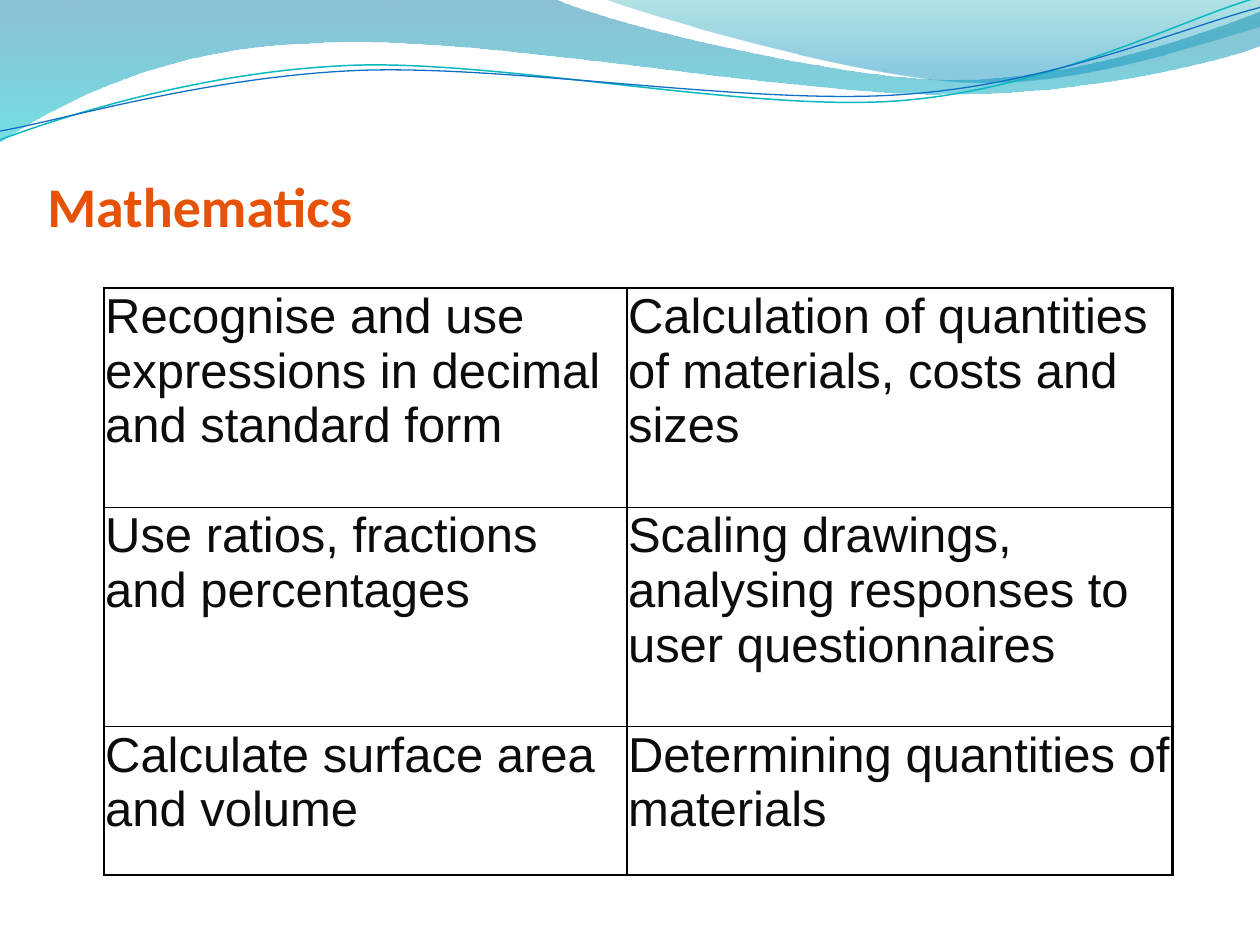
import math

import pptx
import pptx.util
import pptx.dml.color
import pptx.enum.text
import pptx.oxml
from pptx.oxml.ns import qn

Pt = pptx.util.Pt
NS = 'xmlns:a="http://schemas.openxmlformats.org/drawingml/2006/main"'

TITLE = "Mathematics"
ROWS = [
    ("Recognise and use expressions in decimal and standard form",
     "Calculation of quantities of materials, costs and sizes"),
    ("Use ratios, fractions and percentages",
     "Scaling drawings, analysing responses to user questionnaires"),
    ("Calculate surface area and volume",
     "Determining quantities of materials"),
]
COL_WIDTHS = [298.8, 311.8]
ROW_HEIGHTS = [125.3, 125.3, 85]
TABLE_LEFT, TABLE_TOP = 59.4, 164.6
OUTER, INNER = 1.5, 1

# A wave is a list of parts: one point is a straight step, three are a curve.
BANDS = [
    {"wave": [[(0, 0)], [(316.8, -0.7)],
              [(342.7, 12.2), (478.1, 45.4), (545.8, 45.4)],
              [(614.2, 45.4), (689.8, 18.7), (720, 6.5)],
              [(720.7, 25.9)],
              [(707.8, 31.7), (626.4, 54.7), (537.1, 54)],
              [(447.8, 54), (275, 20.2), (185, 24.5)],
              [(92.9, 25.9), (33.1, 59.8), (-0.7, 81.4)]],
     "stops": [(0, "0074A1", 45), (1, "00C6CF", 55)]},
    {"wave": [[(344.9, -0.7)],
              [(366.5, 7.9), (491, 44.6), (553.7, 46.8)],
              [(616.3, 49.7), (691.9, 23), (720, 15.1)],
              [(720, 0)]],
     "stops": [(0, "00A1A9", 30), (0.8, "008BBF", 45)]},
]
TILT = -2.7
STRANDS = [
    {"wave": [[(0, 79.9)],
              [(34.6, 67), (113.8, 41), (199.4, 37.4)],
              [(284.4, 33.8), (427, 64.1), (513.4, 57.6)],
              [(599.8, 51.1), (675.4, 10.8), (718.6, -1.4)]],
     "center": (359.3, 41.4), "color": "0AB8BF", "width": 0.85},
    {"wave": [[(0, 74.9)],
              [(33.8, 69.1), (118.1, 43.9), (203.8, 40.3)],
              [(290.2, 36.7), (429.8, 60.5), (516.2, 54)],
              [(601.9, 48.2), (677.5, 15.1), (720, 4.3)]],
     "center": (359.6, 42.5), "color": "0F6FC6", "width": 0.75},
]


def rgb(value):
    return pptx.dml.color.RGBColor.from_string(value)


def rotate(point, center, degrees):
    angle = math.radians(degrees)
    dx, dy = point[0] - center[0], point[1] - center[1]
    return (center[0] + dx * math.cos(angle) - dy * math.sin(angle),
            center[1] + dx * math.sin(angle) + dy * math.cos(angle))


def add_wave(s, wave, close):
    """Draw the control points as a polyline, then join each triple into a curve."""
    points = [(Pt(x), Pt(y)) for part in wave for x, y in part]
    builder = s.shapes.build_freeform(*points[0])
    builder.add_line_segments(points[1:], close=close)
    sp = builder.convert_to_shape()
    sp.shadow.inherit = False
    steps = iter(list(sp._element.iter(qn("a:lnTo"))))
    for part in wave[1:]:
        lines = [next(steps) for _ in part]
        if len(part) == 3:
            curve = pptx.oxml.parse_xml(f"<a:cubicBezTo {NS}/>")
            lines[0].addprevious(curve)
            for line in lines:
                curve.append(line[0])
                line.getparent().remove(line)
    return sp


def add_band(s, wave, stops):
    sp = add_wave(s, wave, True)
    sp.line.fill.background()
    sp.fill.gradient()
    sp.fill.gradient_angle = 270
    for stop, (position, color, _) in zip(sp.fill.gradient_stops, stops):
        stop.position = position
        stop.color.rgb = rgb(color)
    colors = list(sp._element.spPr.find(qn("a:gradFill")).iter(qn("a:srgbClr")))
    for element, (_, _, opacity) in zip(colors, stops):
        element.append(pptx.oxml.parse_xml(f'<a:alpha {NS} val="{opacity * 1000}"/>'))


def add_strand(s, wave, center, color, width):
    level = [[rotate(point, center, -TILT) for point in part] for part in wave]
    sp = add_wave(s, level, False)
    sp.rotation = TILT
    sp.fill.background()
    sp.line.color.rgb = rgb(color)
    sp.line.width = Pt(width)


def write(tf, text, font):
    p = tf.paragraphs[0]
    p.alignment = pptx.enum.text.PP_ALIGN.LEFT
    r = p.add_run()
    r.text = text
    r.font.color.rgb = rgb(font["color"])
    for name in ("name", "size", "bold"):
        setattr(r.font, name, font[name])
    return p


def set_borders(cell, widths):
    tc_pr = cell._tc.get_or_add_tcPr()
    for i, (side, width) in enumerate(widths.items()):
        tc_pr.insert(i, pptx.oxml.parse_xml(
            f'<a:ln{side} {NS} w="{Pt(width)}"><a:solidFill>'
            f'<a:srgbClr val="000000"/></a:solidFill></a:ln{side}>'))


def add_grid(s):
    frame = s.shapes.add_table(len(ROWS), len(COL_WIDTHS), Pt(TABLE_LEFT), Pt(TABLE_TOP),
                               Pt(sum(COL_WIDTHS)), Pt(sum(ROW_HEIGHTS)))
    table = frame.table
    table.first_row = table.horz_banding = False
    for column, width in zip(table.columns, COL_WIDTHS):
        column.width = Pt(width)
    for row, height in zip(table.rows, ROW_HEIGHTS):
        row.height = Pt(height)
    font = {"name": "Arial", "size": Pt(28), "bold": False, "color": "0C0C0C"}
    last_row, last_col = len(ROWS) - 1, len(COL_WIDTHS) - 1
    for i, texts in enumerate(ROWS):
        for j, text in enumerate(texts):
            cell = table.cell(i, j)
            cell.fill.background()
            for side in ("left", "top", "right", "bottom"):
                setattr(cell, "margin_" + side, Pt(0.7))
            write(cell.text_frame, text, font).space_after = Pt(2)
            set_borders(cell, {"L": INNER if j else OUTER,
                               "R": OUTER if j == last_col else INNER,
                               "T": INNER if i else OUTER,
                               "B": OUTER if i == last_row else INNER})


def main():
    prs = pptx.Presentation()
    prs.slide_width, prs.slide_height = Pt(720), Pt(540)
    s = prs.slides.add_slide(prs.slide_layouts[5])
    for band in BANDS:
        add_band(s, **band)
    for strand in STRANDS:
        add_strand(s, **strand)

    title = s.shapes.title
    box = {"left": 19.8, "top": 94.3, "width": 663.1, "height": 82.1}
    for name, value in box.items():
        setattr(title, name, Pt(value))
    tf = title.text_frame
    tf.vertical_anchor = pptx.enum.text.MSO_ANCHOR.TOP
    write(tf, TITLE, {"name": "Calibri", "size": Pt(32), "bold": True, "color": "E75306"})

    add_grid(s)
    prs.save("out.pptx")


if __name__ == "__main__":
    main()
